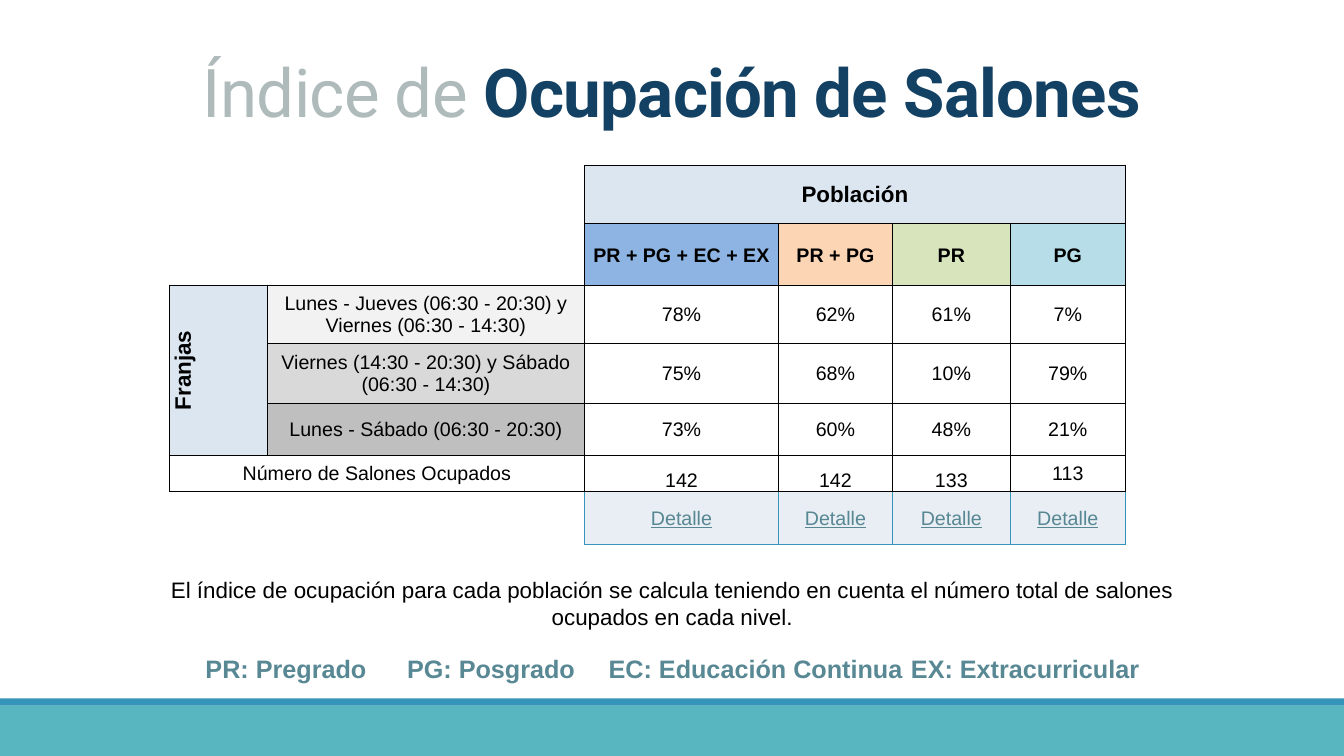
from dataclasses import dataclass

from lxml.etree import SubElement
from pptx import Presentation
from pptx.dml.color import RGBColor
from pptx.enum.shapes import MSO_SHAPE
from pptx.enum.text import MSO_ANCHOR, MSO_AUTO_SIZE, PP_ALIGN
from pptx.oxml.ns import qn
from pptx.util import Cm, Pt


@dataclass(frozen=True)
class Theme:
    heading_font: str = "Roboto"
    body_font: str = "Arial"
    title_size: int = 48
    legend_size: int = 18
    label_size: int = 16
    cell_size: int = 14
    ink: str = "000000"
    title_light: str = "AFBABB"
    title_dark: str = "134163"
    legend: str = "588894"
    detail: str = "578793"
    detail_fill: str = "E8EEF3"
    band: str = "58B6C0"
    stripe: str = "3494BA"
    blank: str = "FFFFFF"
    header: str = "DCE6F1"
    populations: tuple = ("8DB4E2", "FCD5B4", "D8E4BC", "B7DEE8")
    slots: tuple = ("F2F2F2", "D9D9D9", "BFBFBF")


def apply(target, values):
    for name, value in values.items():
        setattr(target, name, value)


class SlideBuilder:
    def __init__(self, page, theme):
        self.page = page
        self.theme = theme

    def add_span(self, para, text, size, color, spacing=None, **font):
        span = para.add_run()
        span.text = text
        apply(span.font, {"name": self.theme.body_font, "size": Pt(size), **font})
        span.font.color.rgb = RGBColor.from_string(color)
        if spacing:
            span.font._element.set("spc", str(spacing))

    def bar(self, top, height, color):
        box = self.page.shapes.add_shape(
            MSO_SHAPE.RECTANGLE, 0, Cm(top), Cm(33.87), Cm(height)
        )
        box.shadow.inherit = False
        box.fill.solid()
        box.fill.fore_color.rgb = RGBColor.from_string(color)
        box.line.fill.background()

    def text(self, left, top, width, height, **frame):
        box = self.page.shapes.add_textbox(Cm(left), Cm(top), Cm(width), Cm(height))
        apply(box.text_frame, {"word_wrap": True, **frame})
        para = box.text_frame.paragraphs[0]
        para.alignment = PP_ALIGN.CENTER
        return para

    def table(self, left, top, widths, heights):
        table = self.page.shapes.add_table(
            len(heights), len(widths), Cm(left), Cm(top),
            Cm(sum(widths)), Cm(sum(heights)),
        ).table
        apply(table, {"first_row": False, "horz_banding": False})
        for column, width in zip(table.columns, widths):
            column.width = Cm(width)
        for row, height in zip(table.rows, heights):
            row.height = Cm(height)
        return table

    def cell(self, cell, text="", fill=None, color=None, size=None,
             anchor=MSO_ANCHOR.MIDDLE, **font):
        apply(cell, {
            "margin_left": Cm(0.03), "margin_right": Cm(0.03),
            "margin_top": Cm(0.03), "margin_bottom": 0,
            "vertical_anchor": anchor,
        })
        if fill:
            cell.fill.solid()
            cell.fill.fore_color.rgb = RGBColor.from_string(fill)
        else:
            cell.fill.background()
        para = cell.text_frame.paragraphs[0]
        para.alignment = PP_ALIGN.CENTER
        if text:
            self.add_span(para, text, size or self.theme.cell_size,
                          color or self.theme.ink, **font)

    def borders(self, cell, color, weights):
        properties = cell._tc.get_or_add_tcPr()
        for index, (side, weight) in enumerate(zip("LRTB", weights)):
            line = SubElement(properties, qn(f"a:ln{side}"))
            if weight:
                line.set("w", str(Pt(weight)))
                paint = SubElement(line, qn("a:solidFill"))
                SubElement(paint, qn("a:srgbClr")).set("val", color)
            else:
                SubElement(line, qn("a:noFill"))
            properties.insert(index, line)


def border_weights(row, column):
    if row < 2 and column < 2:
        return 0, int(column == 1), 0, int(row == 1)
    left, right = (1 if edge in (0, 2, 6) else 0.5 for edge in (column, column + 1))
    thick_rows = (0, 1, 2, 5, 6) if column < 2 else (0, 1, 5, 6)
    top, bottom = (1 if edge in thick_rows else 0.5 for edge in (row, row + 1))
    return left, right, top, bottom


def add_occupancy(builder, left, top, widths, heights):
    theme = builder.theme
    table = builder.table(left, top, widths, heights)
    populations = ("PR + PG + EC + EX", "PR + PG", "PR", "PG")
    slots = (
        ("Lunes - Jueves (06:30 - 20:30) y Viernes (06:30 - 14:30)",
         ("78%", "62%", "61%", "7%")),
        ("Viernes (14:30 - 20:30) y Sábado (06:30 - 14:30)",
         ("75%", "68%", "10%", "79%")),
        ("Lunes - Sábado (06:30 - 20:30)", ("73%", "60%", "48%", "21%")),
    )
    heading = {"fill": theme.header, "size": theme.label_size, "bold": True}
    contents = {
        (0, 2): {"text": "Población", **heading},
        (2, 0): {"text": "Franjas", **heading},
        (5, 0): {"text": "Número de Salones Ocupados"},
    }
    for row in range(2):
        for column in range(2):
            contents[row, column] = {"fill": theme.blank}
    for column, (name, fill) in enumerate(zip(populations, theme.populations), 2):
        contents[1, column] = {"text": name, "fill": fill, "bold": True}
    for row, ((label, shares), fill) in enumerate(zip(slots, theme.slots), 2):
        contents[row, 1] = {"text": label, "fill": fill}
        for column, share in enumerate(shares, 2):
            contents[row, column] = {"text": share}
    for column, rooms in enumerate(("142", "142", "133", "113"), 2):
        anchor = MSO_ANCHOR.MIDDLE if column == 5 else MSO_ANCHOR.BOTTOM
        contents[5, column] = {"text": rooms, "anchor": anchor}
    for row in range(len(heights)):
        for column in range(len(widths)):
            cell = table.cell(row, column)
            builder.cell(cell, **contents.get((row, column), {}))
            builder.borders(cell, theme.ink, border_weights(row, column))
    for start, end in (((0, 2), (0, 5)), ((2, 0), (4, 0)), ((5, 0), (5, 1))):
        table.cell(*start).merge(table.cell(*end))
    table.cell(2, 0)._tc.get_or_add_tcPr().set("vert", "vert270")


def main():
    theme = Theme()
    deck = Presentation()
    apply(deck, {"slide_width": Cm(33.87), "slide_height": Cm(19.05)})
    builder = SlideBuilder(deck.slides.add_slide(deck.slide_layouts[6]), theme)

    builder.bar(17.78, 1.27, theme.band)
    builder.bar(17.6, 0.18, theme.stripe)

    title = builder.text(0, 0.25, 33.87, 3.18, vertical_anchor=MSO_ANCHOR.BOTTOM)
    title.line_spacing = 0.85
    for text, color, bold in (
        ("Índice de ", theme.title_light, False),
        ("Ocupación de Salones", theme.title_dark, True),
    ):
        builder.add_span(title, text, theme.title_size, color, spacing=-50,
                         name=theme.heading_font, bold=bold)

    left, top = 4.27, 4.17
    widths = (2.47, 7.99, 4.89, 2.87, 2.97, 2.9)
    heights = (1.47, 1.55, 1.47, 1.5, 1.32, 0.9)
    details = builder.table(left + sum(widths[:2]), top + sum(heights),
                            widths[2:], (1.35,))
    for cell in details.rows[0].cells:
        builder.cell(cell, "Detalle", theme.detail_fill, theme.detail, underline=True)
        builder.borders(cell, theme.stripe, (1, 1, 1, 1))

    fit = {"auto_size": MSO_AUTO_SIZE.SHAPE_TO_FIT_TEXT}
    note = builder.text(3.96, 14.4, 25.96, 1.63, **fit)
    builder.add_span(
        note,
        "El índice de ocupación para cada población se calcula teniendo en cuenta "
        "el número total de salones ocupados en cada nivel.",
        theme.label_size, theme.ink,
    )
    legend = builder.text(3.61, 16.33, 26.67, 1.02, **fit)
    builder.add_span(
        legend,
        "PR: Pregrado\tPG: Posgrado\tEC: Educación Continua\tEX: Extracurricular",
        theme.legend_size, theme.legend, bold=True,
    )
    add_occupancy(builder, left, top, widths, heights)
    deck.save("out.pptx")


if __name__ == "__main__":
    main()
